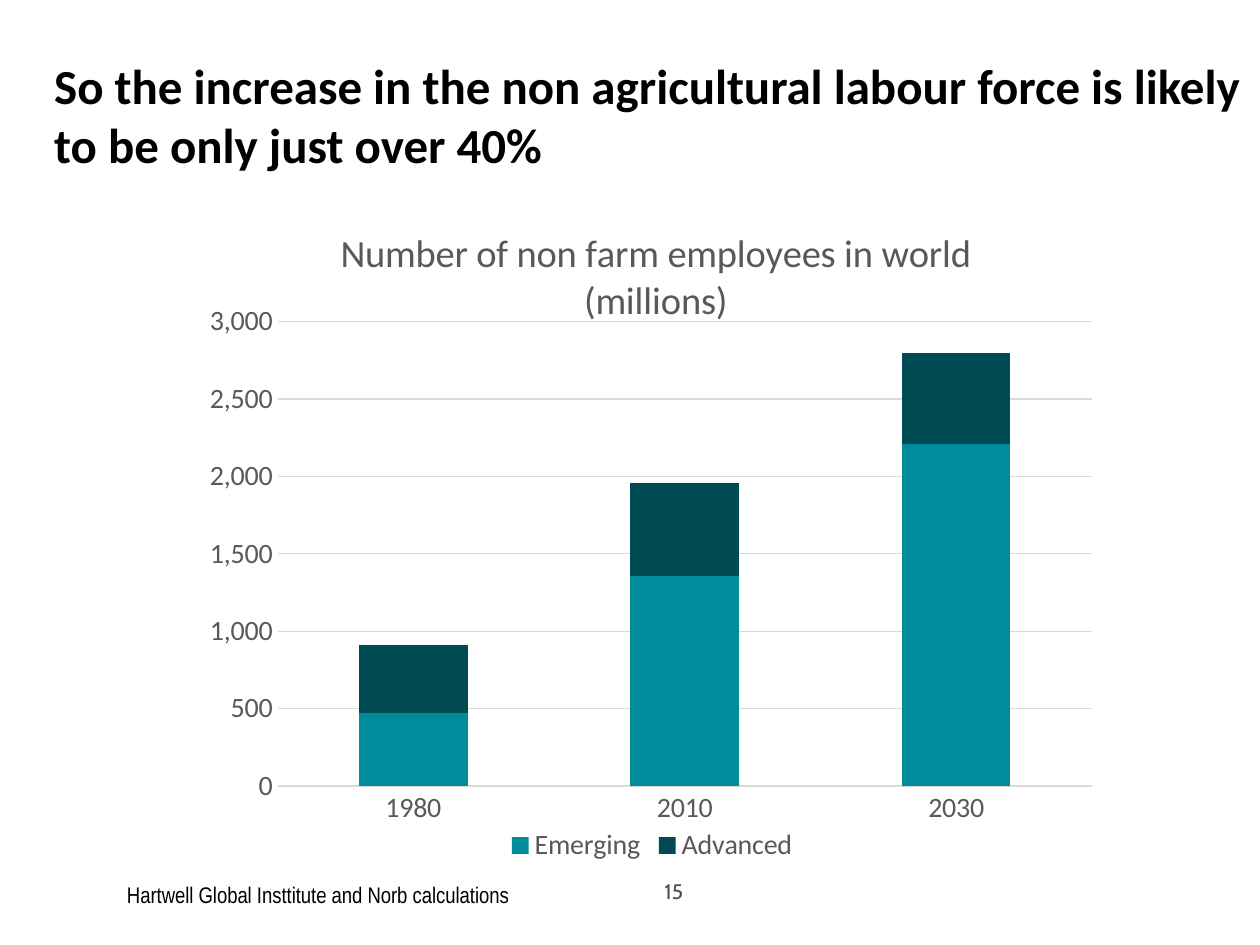
from dataclasses import dataclass, field

from lxml import etree
from pptx import Presentation
from pptx.chart.data import CategoryChartData
from pptx.dml.color import RGBColor
from pptx.enum.chart import XL_CHART_TYPE, XL_LEGEND_POSITION, XL_TICK_MARK
from pptx.enum.text import MSO_ANCHOR, PP_ALIGN
from pptx.oxml.ns import qn
from pptx.util import Inches, Pt

STACKED = XL_CHART_TYPE.COLUMN_STACKED
BOTTOM = XL_LEGEND_POSITION.BOTTOM
NO_TICK = XL_TICK_MARK.NONE
TOP, MIDDLE = MSO_ANCHOR.TOP, MSO_ANCHOR.MIDDLE
LEFT, RIGHT = PP_ALIGN.LEFT, PP_ALIGN.RIGHT

COLORS = {
    "black": "000000",
    "page": "4D4D4D",
    "label": "595959",
    "grid": "D9D9D9",
    "Emerging": "008C9B",
    "Advanced": "004A53",
}
EMPLOYEES = {"Emerging": (470, 1360, 2210), "Advanced": (440, 600, 590)}


@dataclass
class SlideBuilder:
    """Holds the style and the current slide, and adds each kind of element."""

    slide: object
    font_name: str = "Calibri"
    colors: dict = field(default_factory=lambda: COLORS)

    def color(self, name):
        return RGBColor.from_string(self.colors[name])

    def format_font(self, font, color, size, name=None, bold=False):
        values = {"name": name or self.font_name, "size": Pt(size), "bold": bold}
        for attribute, value in values.items():
            setattr(font, attribute, value)
        font.color.rgb = self.color(color)

    def format_line(self, line):
        line.color.rgb = self.color("grid")
        line.width = Pt(0.75)

    def fill_text(self, shape, text, color, size, name=None, bold=False,
                  align=LEFT, anchor=TOP):
        frame = shape.text_frame
        frame.word_wrap = True
        frame.vertical_anchor = anchor
        paragraph = frame.paragraphs[0]
        paragraph.alignment = align
        run = paragraph.add_run()
        run.text = text
        self.format_font(run.font, color, size, name, bold)

    def add_title(self, text, box):
        title = self.slide.shapes.title
        for side, length in zip(("left", "top", "width", "height"), box):
            setattr(title, side, Inches(length))
        for side in ("left", "top", "right", "bottom"):
            setattr(title.text_frame, f"margin_{side}", 0)
        self.fill_text(title, text, "black", 28, bold=True)

    def add_text(self, text, box, **style):
        shape = self.slide.shapes.add_textbox(*map(Inches, box))
        self.fill_text(shape, text, **style)

    def set_layout(self, parent, before, **values):
        for old in parent.findall(qn("c:layout")):
            parent.remove(old)
        layout = etree.Element(qn("c:layout"))
        manual = etree.SubElement(layout, qn("c:manualLayout"))
        for tag, value in values.items():
            etree.SubElement(manual, qn(f"c:{tag}")).set("val", str(value))
        parent.find(qn(before)).addprevious(layout)

    def add_stacked_chart(self, title, categories, series, box):
        data = CategoryChartData(number_format="#,##0")
        data.categories = categories
        for name, values in series.items():
            data.add_series(name, values)
        chart = self.slide.shapes.add_chart(STACKED, *map(Inches, box), data).chart
        self.format_font(chart.font, "black", 10)
        self.format_chart_title(chart, title)
        self.format_axes(chart)

        plot = chart.plots[0]
        plot.gap_width, plot.overlap = 150, 100
        plot.vary_by_categories = False
        for column in plot.series:
            column.format.fill.solid()
            column.format.fill.fore_color.rgb = self.color(column.name)

        chart.has_legend = True
        chart.legend.position = BOTTOM
        chart.legend.include_in_layout = False
        self.format_font(chart.legend.font, "label", 16)
        plot_area = chart.value_axis._element.getparent()
        self.set_layout(plot_area, "c:barChart", layoutTarget="inner",
                        xMode="edge", yMode="edge", x=0.1, y=0.2, w=0.87, h=0.68)

    def format_chart_title(self, chart, text):
        chart.has_title = True
        title = chart.chart_title
        run = title.text_frame.paragraphs[0].add_run()
        run.text = text
        self.format_font(run.font, "label", 22)
        title.include_in_layout = False
        self.set_layout(title._element, "c:overlay",
                        xMode="edge", yMode="edge", x=0.16, y=0.05)

    def format_axes(self, chart):
        category, value = chart.category_axis, chart.value_axis
        for axis in (category, value):
            axis.major_tick_mark = axis.minor_tick_mark = NO_TICK
            self.format_font(axis.tick_labels.font, "label", 16)
        self.format_line(category.format.line)
        scale = {"minimum_scale": 0, "maximum_scale": 3000, "major_unit": 500,
                 "has_major_gridlines": True}
        for attribute, setting in scale.items():
            setattr(value, attribute, setting)
        value.format.line.fill.background()
        value.tick_labels.number_format = "#,##0"
        value.tick_labels.number_format_is_linked = False
        self.format_line(value.major_gridlines.format.line)


def main():
    presentation = Presentation()
    presentation.slide_width = Inches(10)
    presentation.slide_height = Inches(7.5)
    title_only = presentation.slide_layouts[5]
    builder = SlideBuilder(presentation.slides.add_slide(title_only))

    builder.add_text("15", (4.44, 6.94, 1.08, 0.27), color="page", size=12,
                     name="Cabin", align=RIGHT, anchor=MIDDLE)
    builder.add_title(
        "So the increase in the non agricultural labour force is likely "
        "to be only just over 40%", (0.43, 0.44, 9.71, 0.64))
    builder.add_text("Hartwell Global Insttitute and Norb calculations",
                     (0.91, 6.94, 5.33, 0.32), color="black", size=12.9,
                     name="Arial Narrow")
    builder.add_stacked_chart(
        "Number of non farm employees in world (millions)",
        ("1980", "2010", "2030"), EMPLOYEES, (1.46, 1.47, 7.43, 5.42))
    presentation.save("out.pptx")


if __name__ == "__main__":
    main()
